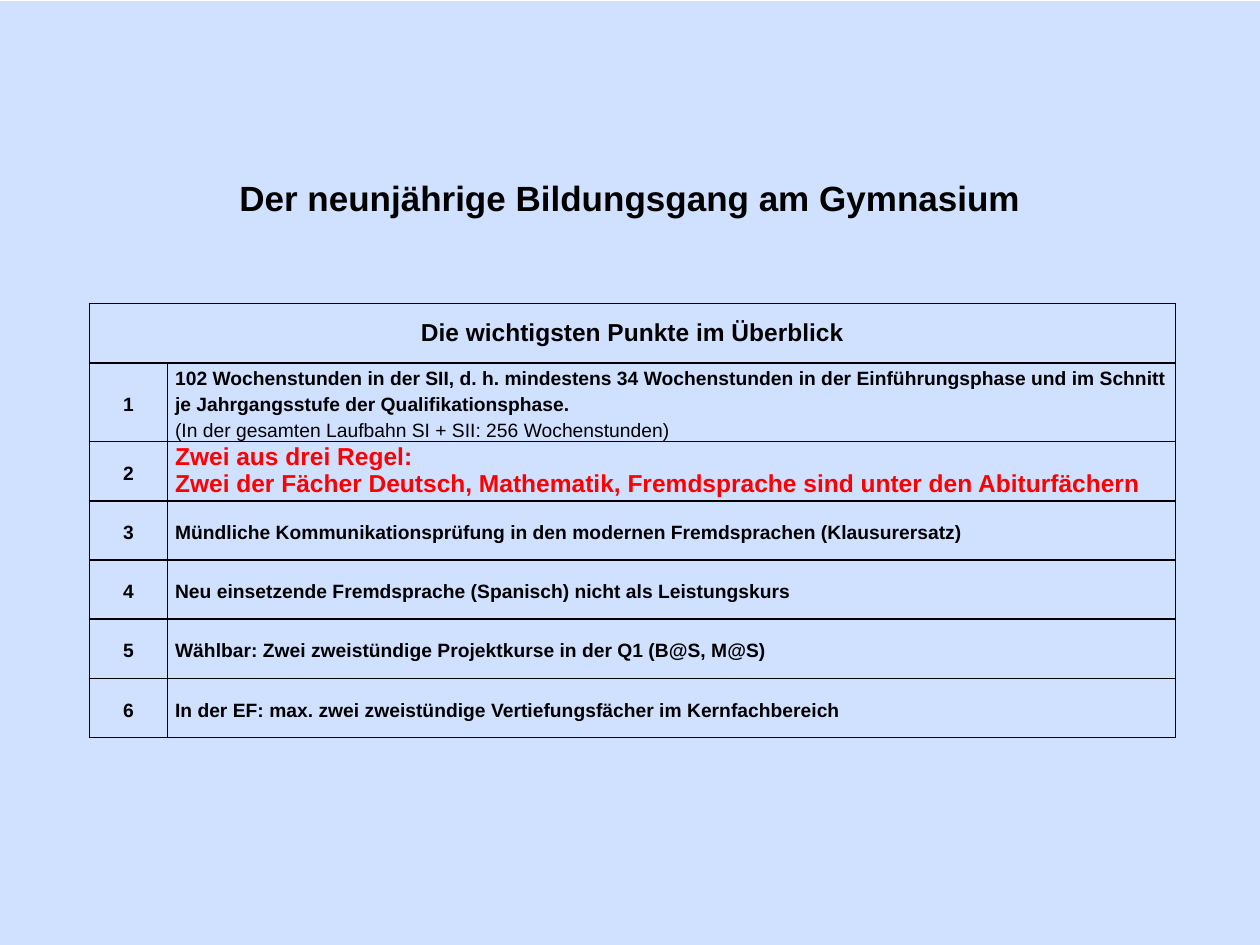
from lxml import etree
from pptx import Presentation
from pptx.dml.color import RGBColor
from pptx.enum.shapes import MSO_SHAPE
from pptx.enum.text import MSO_ANCHOR, PP_ALIGN
from pptx.oxml.ns import qn
from pptx.util import Inches, Pt

RECTANGLE = MSO_SHAPE.RECTANGLE
MIDDLE = MSO_ANCHOR.MIDDLE
LEFT, CENTER = PP_ALIGN.LEFT, PP_ALIGN.CENTER
TITLE_ONLY = 5

HEADING = "Die wichtigsten Punkte im Überblick"
# Each point is a list of lines: (text, bold)
POINTS = [
    [("102 Wochenstunden in der SII, d. h. mindestens 34 Wochenstunden in der "
      "Einführungsphase und im Schnitt je Jahrgangsstufe der Qualifikationsphase.", True),
     ("(In der gesamten Laufbahn SI + SII: 256 Wochenstunden)", False)],
    [("Zwei aus drei Regel:", True),
     ("Zwei der Fächer Deutsch, Mathematik, Fremdsprache sind unter den Abiturfächern", True)],
    [("Mündliche Kommunikationsprüfung in den modernen Fremdsprachen (Klausurersatz)", True)],
    [("Neu einsetzende Fremdsprache (Spanisch) nicht als Leistungskurs", True)],
    [("Wählbar: Zwei zweistündige Projektkurse in der Q1 (B@S, M@S)", True)],
    [("In der EF: max. zwei zweistündige Vertiefungsfächer im Kernfachbereich", True)],
]
KEY_POINT = 2


def rgb(value):
    return RGBColor.from_string(value)


class Deck:
    font = "Arial"
    ink = "000000"
    accent = "FF0000"
    tint = "6699FF"

    def __init__(self):
        self.prs = Presentation()
        self.prs.slide_width, self.prs.slide_height = Inches(10), Inches(7.5)
        self.s = self.prs.slides.add_slide(self.prs.slide_layouts[TITLE_ONLY])

    def style(self, p, size, color=ink, align=CENTER):
        p.alignment = align
        p.font.name, p.font.size, p.font.bold = self.font, Pt(size), True
        p.font.color.rgb = rgb(color)

    def backdrop(self, opacity):
        """Lay a translucent sheet behind everything else."""
        sp = self.s.shapes.add_shape(RECTANGLE, 0, Inches(0.01), Inches(10), Inches(7.49))
        sp.shadow.inherit = False
        sp.line.fill.background()
        sp.fill.solid()
        sp.fill.fore_color.rgb = rgb(self.tint)
        color = sp.fill._xPr.find(qn("a:solidFill"))[0]
        etree.SubElement(color, qn("a:alpha"), val=str(opacity * 1000))
        self.s.shapes._spTree.insert(2, sp._element)

    def title(self, text):
        sp = self.s.shapes.title
        sp.left, sp.top, sp.width, sp.height = 0, Inches(1.27), Inches(10), Inches(0.6)
        tf = sp.text_frame
        tf.vertical_anchor = MIDDLE
        tf.text = text
        self.style(tf.paragraphs[0], 20)

    def border(self, cell):
        tcPr = cell._tc.get_or_add_tcPr()
        for side in ("lnL", "lnR", "lnT", "lnB"):
            ln = etree.SubElement(tcPr, qn(f"a:{side}"), w=str(Pt(1)))
            fill = etree.SubElement(ln, qn("a:solidFill"))
            etree.SubElement(fill, qn("a:srgbClr"), val=self.ink)

    def cell(self, cell, lines, size, color=ink, align=CENTER, gap=0):
        p = cell.text_frame.paragraphs[0]
        for i, (text, bold) in enumerate(lines):
            if i:
                p.add_line_break()
            r = p.add_run()
            r.text = text
            if not bold:
                r.font.bold = False
        self.style(p, size, color, align)
        p.line_spacing = Pt(15)
        p.space_before = p.space_after = Pt(gap)

    def table(self, heading, points):
        rows = len(points) + 1
        frame = self.s.shapes.add_table(rows, 2, Inches(0.71), Inches(2.41),
                                        Inches(8.62), Inches(3.32))
        table = frame.table
        table.first_row = table.horz_banding = False
        table.columns[0].width, table.columns[1].width = Inches(0.62), Inches(8)
        for i, row in enumerate(table.rows):
            row.height = Inches(0.5 if i == 1 else 0.47)
        for cell in table.iter_cells():
            self.border(cell)
            cell.fill.background()
            cell.vertical_anchor = MIDDLE
            cell.margin_left = cell.margin_right = Inches(0.06)
            cell.margin_top = cell.margin_bottom = 0
        table.cell(0, 0).merge(table.cell(0, 1))
        self.cell(table.cell(0, 0), [(heading, True)], 14)
        for number, lines in enumerate(points, 1):
            size, color = (14, self.accent) if number == KEY_POINT else (11, self.ink)
            self.cell(table.cell(number, 0), [(str(number), True)], 11)
            self.cell(table.cell(number, 1), lines, size, color, LEFT, gap=6)


def main():
    deck = Deck()
    deck.backdrop(opacity=30)
    deck.title("Der neunjährige Bildungsgang am Gymnasium")
    deck.table(HEADING, POINTS)
    deck.prs.save("out.pptx")


if __name__ == "__main__":
    main()
